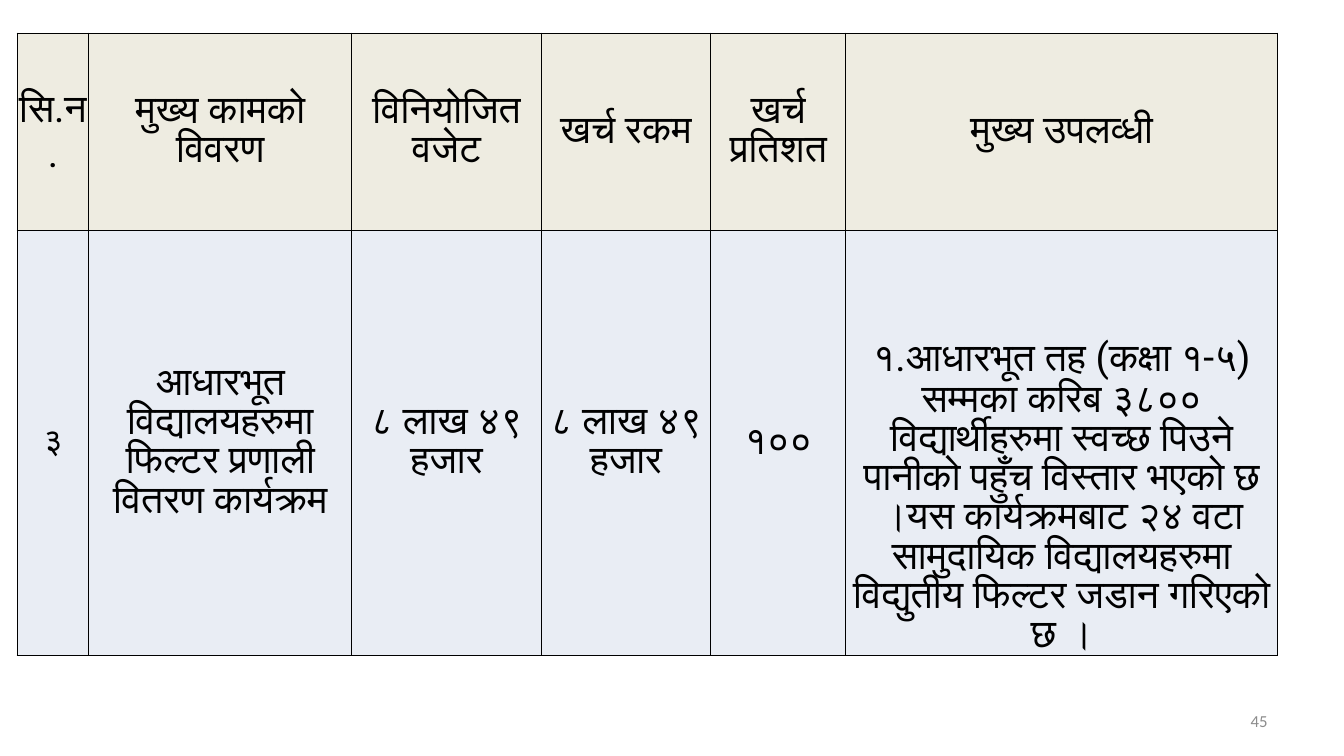
from pptx import Presentation, util as u
from pptx.dml.color import RGBColor
from pptx.enum import text
from pptx.oxml import parse_xml
from pptx.oxml.ns import nsdecls

HUES = {"head": "EEECE1", "body": "E9EDF4", "ink": "000000", "page": "8C8C8C"}
COLS = [0.71, 2.61, 1.88, 1.68, 1.34, 4.28]
ROWS = [1.95, 4.21]
CELLS = [
    ["सि.न.", "मुख्य कामको विवरण", "विनियोजित वजेट", "खर्च रकम",
     "खर्च प्रतिशत", "मुख्य उपलव्धी"],
    ["३", "आधारभूत विद्यालयहरुमा फिल्टर प्रणाली वितरण कार्यक्रम",
     "८ लाख ४९ हजार", "८ लाख ४९ हजार", "१००",
     "१.आधारभूत तह (कक्षा १-५) सम्मका करिब ३८०० विद्यार्थीहरुमा स्वच्छ "
     "पिउने पानीको पहुँच विस्तार भएको छ ।यस कार्यक्रमबाट २४ वटा सामुदायिक "
     "विद्यालयहरुमा विद्युतीय फिल्टर जडान गरिएको छ ।"],
]


def style(para, face, size, hue, align):
    para.alignment = align
    para.font.name, para.font.size = face, u.Pt(size)
    para.font.color.rgb = RGBColor.from_string(HUES[hue])


def border(cell):
    props = cell._tc.get_or_add_tcPr()
    for spot, side in enumerate(("lnL", "lnR", "lnT", "lnB")):
        props.insert(spot, parse_xml(
            f'<a:{side} {nsdecls("a")} w="12700"><a:solidFill>'
            f'<a:srgbClr val="{HUES["ink"]}"/></a:solidFill></a:{side}>'))


def fill_cell(cell, words, size, hue, anchor):
    cell.text = words
    cell.margin_left = cell.margin_right = 0
    cell.margin_top = cell.margin_bottom = 0
    cell.vertical_anchor = anchor
    cell.fill.solid()
    cell.fill.fore_color.rgb = RGBColor.from_string(HUES[hue])
    style(cell.text_frame.paragraphs[0], "Roboto", size, "ink",
          text.PP_ALIGN.CENTER)
    border(cell)


def add_grid(slide, box):
    left, top, wide, high = box
    grid = slide.shapes.add_table(len(ROWS), len(COLS), *map(u.Inches, box)).table
    # Column and row shares of the box
    for col, part in zip(grid.columns, COLS):
        col.width = u.Inches(wide * part / sum(COLS))
    for row, part in zip(grid.rows, ROWS):
        row.height = u.Inches(high * part / sum(ROWS))
    # Header row, then the programme row
    for r, line in enumerate(CELLS):
        for c, words in enumerate(line):
            last = r == 1 and c == len(COLS) - 1
            anchor = text.MSO_ANCHOR.BOTTOM if last else text.MSO_ANCHOR.MIDDLE
            size = 24 if (r, c) == (1, 0) else 28
            fill_cell(grid.cell(r, c), words, size, "body" if r else "head", anchor)


def add_page(slide, box):
    frame = slide.shapes.add_textbox(*map(u.Inches, box)).text_frame
    frame.word_wrap = True
    frame.vertical_anchor = text.MSO_ANCHOR.MIDDLE
    frame.text = "45"
    style(frame.paragraphs[0], "Calibri", 12, "page", text.PP_ALIGN.RIGHT)


def main():
    deck = Presentation()
    deck.slide_width, deck.slide_height = u.Inches(13.33), u.Inches(7.5)
    slide = deck.slides.add_slide(deck.slide_layouts[6])
    add_grid(slide, (0.17, 0.33, 12.5, 6.17))
    add_page(slide, (9.56, 6.95, 3.11, 0.4))
    deck.save("out.pptx")


if __name__ == "__main__":
    main()
